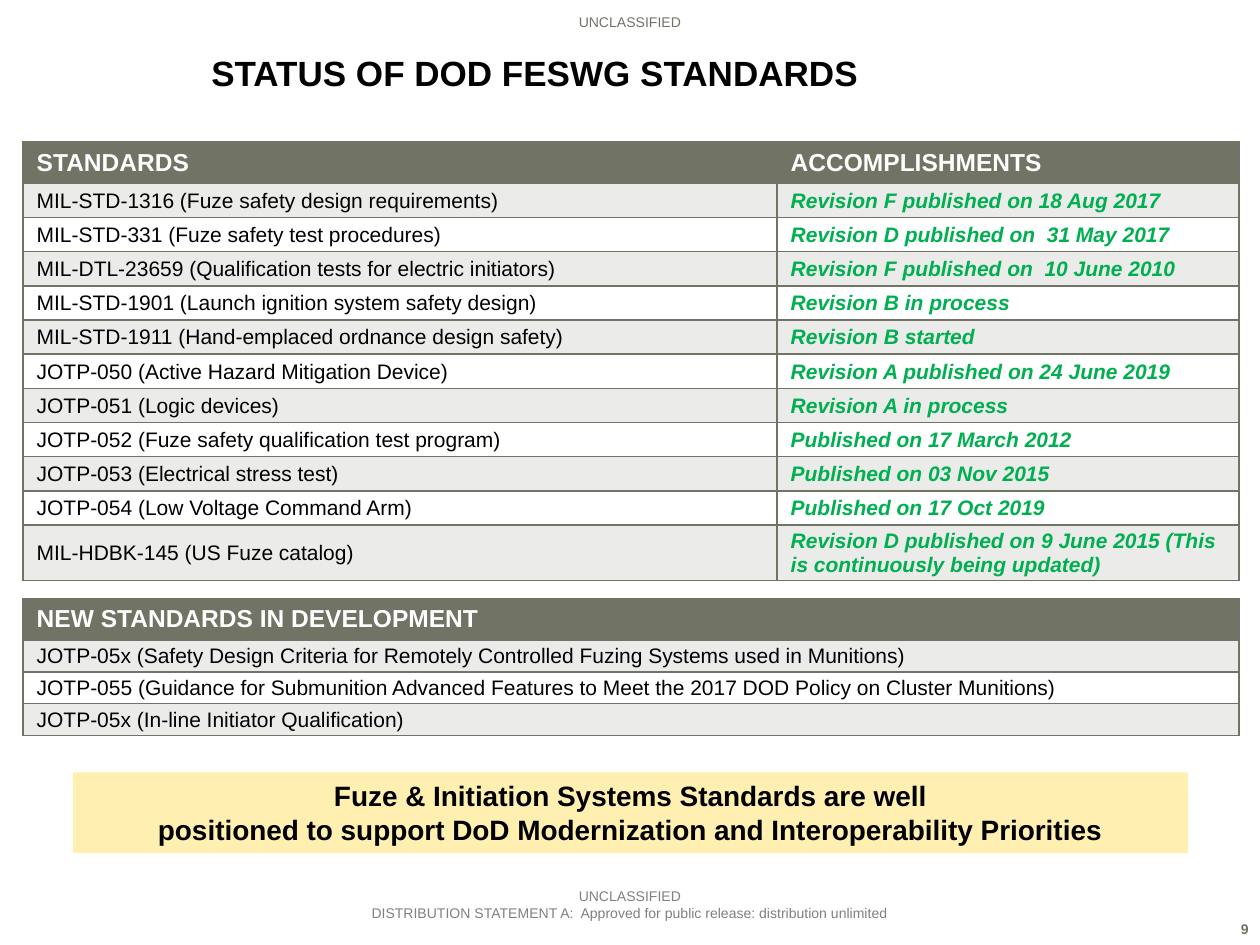
from lxml import etree
from pptx import Presentation
from pptx import util as u
from pptx.dml import color
from pptx.enum import shapes, text
from pptx.oxml import ns

OLIVE = color.RGBColor(0x71, 0x73, 0x65)
GRAY = color.RGBColor(0x80, 0x80, 0x80)
PALE = color.RGBColor(0xEB, 0xEB, 0xEA)
CREAM = color.RGBColor(0xFF, 0xF0, 0xB1)
GREEN = color.RGBColor(0x00, 0xB0, 0x50)
BLACK = color.RGBColor(0, 0, 0)
WHITE = color.RGBColor(255, 255, 255)

LEFT, MID, RIGHT = text.PP_ALIGN.LEFT, text.PP_ALIGN.CENTER, text.PP_ALIGN.RIGHT
TOP, CENTER, BASE = text.MSO_ANCHOR.TOP, text.MSO_ANCHOR.MIDDLE, text.MSO_ANCHOR.BOTTOM

STATUS = [
    ("STANDARDS", "ACCOMPLISHMENTS"),
    ("MIL-STD-1316 (Fuze safety design requirements)", "Revision F published on 18 Aug 2017"),
    ("MIL-STD-331 (Fuze safety test procedures)", "Revision D published on  31 May 2017"),
    ("MIL-DTL-23659 (Qualification tests for electric initiators)", "Revision F published on  10 June 2010"),
    ("MIL-STD-1901 (Launch ignition system safety design)", "Revision B in process"),
    ("MIL-STD-1911 (Hand-emplaced ordnance design safety)", "Revision B started"),
    ("JOTP-050 (Active Hazard Mitigation Device)", "Revision A published on 24 June 2019"),
    ("JOTP-051 (Logic devices)", "Revision A in process"),
    ("JOTP-052 (Fuze safety qualification test program)", "Published on 17 March 2012"),
    ("JOTP-053 (Electrical stress test)", "Published on 03 Nov 2015"),
    ("JOTP-054 (Low Voltage Command Arm)", "Published on 17 Oct 2019"),
    ("MIL-HDBK-145 (US Fuze catalog)",
     "Revision D published on 9 June 2015 (This is continuously being updated)"),
]
FUTURE = [
    ("NEW STANDARDS IN DEVELOPMENT", ""),
    ("JOTP-05x (Safety Design Criteria for Remotely Controlled Fuzing Systems used in Munitions)", ""),
    ("JOTP-055 (Guidance for Submunition Advanced Features to Meet the 2017 DOD Policy on Cluster Munitions)", ""),
    ("JOTP-05x (In-line Initiator Qualification)", ""),
]


class Deck:
    face = "Arial"

    def __init__(self, wide, high):
        self.file = Presentation()
        self.file.slide_width, self.file.slide_height = u.Cm(wide), u.Cm(high)
        self.slide = self.file.slides.add_slide(self.file.slide_layouts[6])

    def letter(self, frame, words, size, ink, bold=False, slant=False, align=LEFT):
        frame.text = words
        for para in frame.paragraphs:
            para.alignment = align
            font = para.font
            font.name, font.size = self.face, u.Pt(size)
            font.bold, font.italic = bold, slant
            font.color.rgb = ink

    def label(self, place, words, size, ink, anchor=TOP, **style):
        frame = self.slide.shapes.add_textbox(*map(u.Cm, place)).text_frame
        frame.word_wrap = True
        frame.vertical_anchor = anchor
        self.letter(frame, words, size, ink, **style)

    def banner(self, place, words, size):
        box = self.slide.shapes.add_shape(shapes.MSO_SHAPE.RECTANGLE, *map(u.Cm, place))
        box.shadow.inherit = False
        box.fill.solid()
        box.fill.fore_color.rgb = CREAM
        box.line.fill.background()
        box.text_frame.vertical_anchor = TOP
        self.letter(box.text_frame, words, size, BLACK, bold=True, align=MID)

    def border(self, cell):
        props = cell._tc.get_or_add_tcPr()
        for side in "LRTB":
            line = etree.SubElement(props, ns.qn(f"a:ln{side}"), w=str(u.Pt(1)))
            fill = etree.SubElement(line, ns.qn("a:solidFill"))
            etree.SubElement(fill, ns.qn("a:srgbClr"), val=str(OLIVE))

    def cell(self, cell, words, row, col):
        self.border(cell)
        cell.fill.solid()
        cell.fill.fore_color.rgb = OLIVE if row == 0 else PALE if row % 2 else WHITE
        cell.vertical_anchor = CENTER
        cell.margin_left = cell.margin_right = u.Cm(0.28)
        head = row == 0 and words
        cell.margin_top = u.Cm(0.12 if head else 0.02)
        cell.margin_bottom = u.Cm(0.12 if head else 0)
        if row == 0:
            self.letter(cell.text_frame, words, 14, WHITE, bold=True)
        else:
            side = col == 1
            self.letter(cell.text_frame, words, 12, GREEN if side else BLACK, bold=side, slant=side)

    def table(self, left, top, cols, highs, rows):
        grid = self.slide.shapes.add_table(
            len(rows), len(cols), *map(u.Cm, (left, top, sum(cols), sum(highs)))).table
        for col, wide in zip(grid.columns, cols):
            col.width = u.Cm(wide)
        for r, (high, row) in enumerate(zip(highs, rows)):
            grid.rows[r].height = u.Cm(high)
            for c, words in enumerate(row):
                self.cell(grid.cell(r, c), words, r, c)
            if r and not row[1]:
                grid.cell(r, 0).merge(grid.cell(r, 1))


def main():
    deck = Deck(25.4, 19.05)
    deck.label((3.81, 17.75, 17.78, 0.94),
               "UNCLASSIFIED\nDISTRIBUTION STATEMENT A:  Approved for public release: distribution unlimited",
               8, GRAY, BASE, align=MID)
    deck.label((0, 0.13, 25.4, 0.6), "UNCLASSIFIED", 8, OLIVE, BASE, align=MID)
    deck.label((24.26, 18.44, 1.16, 0.6), "9", 8, OLIVE, bold=True, align=RIGHT)
    deck.label((4.01, 0.76, 16.51, 1.4), "STATUS OF DOD FESWG STANDARDS", 20, BLACK, CENTER, bold=True)
    deck.table(0.46, 2.86, (15.2, 9.32), [0.8] + [0.69] * 10 + [1.12], STATUS)
    deck.table(0.46, 12.07, (16.85, 7.67), [0.82] + [0.64] * 3, FUTURE)
    deck.banner((1.47, 15.57, 22.48, 1.63),
                "Fuze & Initiation Systems Standards are well\v"
                "positioned to support DoD Modernization and Interoperability Priorities", 16)
    deck.file.save("out.pptx")


if __name__ == "__main__":
    main()
